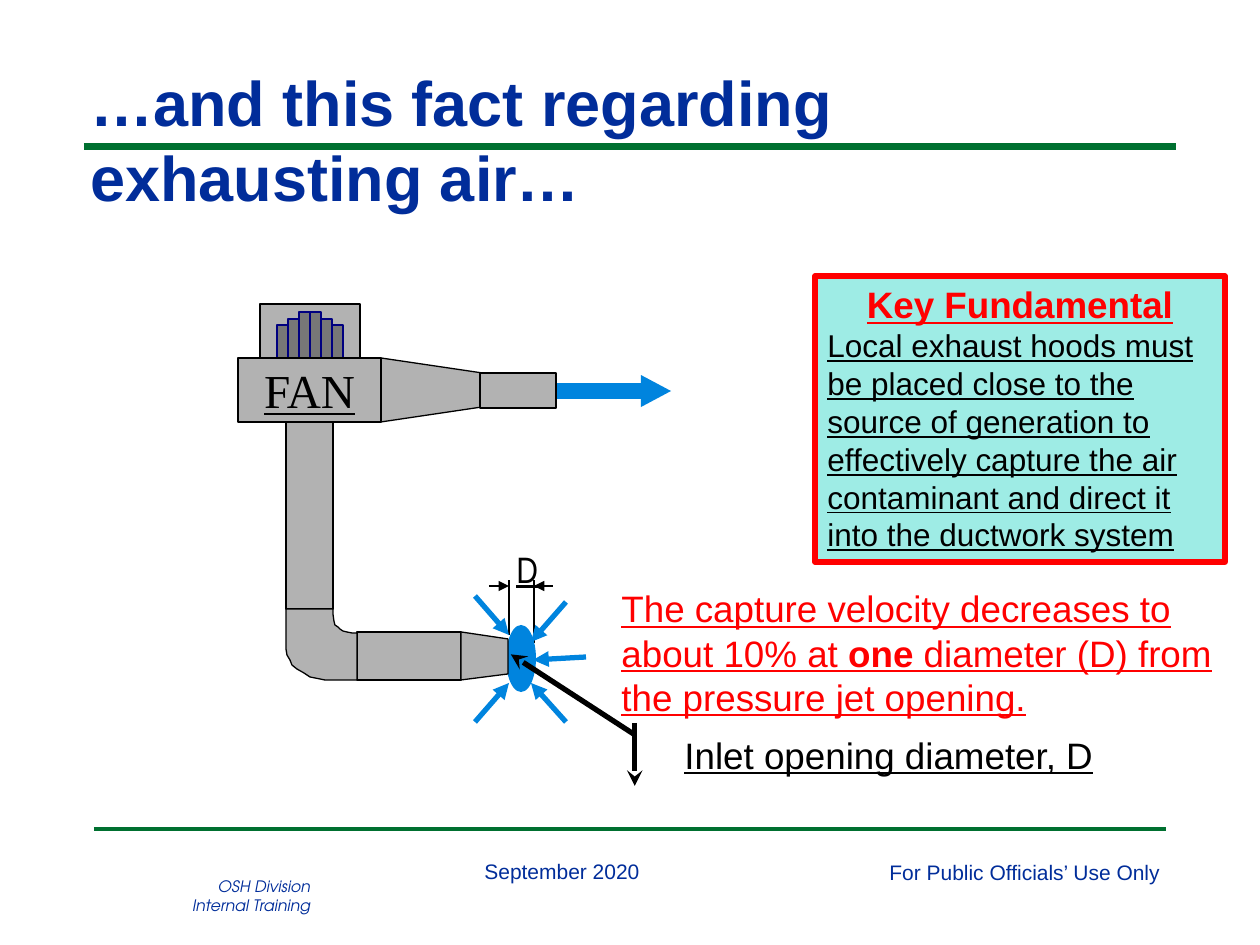
from lxml import etree
from pptx import Presentation
from pptx.dml.color import RGBColor
from pptx.enum.shapes import MSO_CONNECTOR, MSO_SHAPE
from pptx.enum.text import MSO_ANCHOR, PP_ALIGN
from pptx.oxml.ns import qn
from pptx.util import Pt

PX = 914400 / 126

BLACK = RGBColor(0x00, 0x00, 0x00)
NAVY = RGBColor(0x01, 0x2D, 0x9A)
GREEN = RGBColor(0x00, 0x70, 0x30)
AIR_BLUE = RGBColor(0x00, 0x84, 0xDE)
RED = RGBColor(0xFF, 0x00, 0x00)
DUCT_GRAY = RGBColor(0xB2, 0xB2, 0xB2)
MOTOR_GRAY = RGBColor(0x77, 0x77, 0x77)
MOTOR_EDGE = RGBColor(0x00, 0x00, 0x80)
AQUA = RGBColor(0x9E, 0xEC, 0xE5)

OUTLET_CONE = [(381, 422), (489, 406), (489, 374), (381, 358)]
INLET_CONE = [(461, 680), (508, 674), (508, 639), (461, 632)]
ELBOW = [
    (333, 609), (333, 614), (334, 621), (335, 625), (338, 627), (340, 629),
    (343, 631), (347, 632), (352, 633), (357, 633), (357, 680), (325, 680),
    (320, 679), (315, 678), (310, 677), (304, 673), (297, 669), (292, 665),
    (290, 660), (287, 655), (286, 649), (286, 609),
]


def px(*values):
    return [round(value * PX) for value in values]


def style_shape(shape, fill, line, width):
    shape.shadow.inherit = False
    if fill is None:
        shape.fill.background()
    else:
        shape.fill.solid()
        shape.fill.fore_color.rgb = fill
    if line is None:
        shape.line.fill.background()
    else:
        shape.line.color.rgb = line
        shape.line.width = Pt(width)


def add_box(slide, preset, box, fill=None, line=None, width=0.75):
    shape = slide.shapes.add_shape(preset, *px(*box))
    style_shape(shape, fill, line, width)
    return shape


def add_duct(slide, box):
    return add_box(slide, MSO_SHAPE.RECTANGLE, box, DUCT_GRAY, BLACK)


def add_outline(slide, points):
    builder = slide.shapes.build_freeform(*points[0], scale=PX)
    builder.add_line_segments(points[1:], close=True)
    style_shape(builder.convert_to_shape(), DUCT_GRAY, BLACK, 0.75)


def add_arrowhead(line, kind):
    etree.SubElement(line._get_or_add_ln(), qn("a:tailEnd"), type=kind)


def add_line(slide, start, end, color, width, arrow=False):
    connector = slide.shapes.add_connector(
        MSO_CONNECTOR.STRAIGHT, *px(*start, *end))
    connector.line.color.rgb = color
    connector.line.width = Pt(width)
    if arrow:
        add_arrowhead(connector.line, "triangle")
    etree.SubElement(connector._element.spPr, qn("a:effectLst"))


def style_paragraph(paragraph, size, color, font="Arial", align=PP_ALIGN.LEFT,
                    bold=False, italic=False, underline=False):
    paragraph.alignment = align
    paragraph.font.name = font
    paragraph.font.size = Pt(size)
    paragraph.font.color.rgb = color
    paragraph.font.bold = bold
    paragraph.font.italic = italic
    paragraph.font.underline = underline


def write_text(shape, text, size, color, wrap=True, anchor=MSO_ANCHOR.TOP,
               **style):
    frame = shape.text_frame
    frame.word_wrap = wrap
    frame.vertical_anchor = anchor
    frame.text = text
    for paragraph in frame.paragraphs:
        style_paragraph(paragraph, size, color, **style)
    return frame


def add_text(slide, box, text, size, color, **style):
    shape = slide.shapes.add_textbox(*px(*box))
    return write_text(shape, text, size, color, **style)


def add_title(slide):
    title = slide.shapes.title
    title.left, title.top, title.width, title.height = px(84, 63, 1092, 152)
    frame = write_text(title, "…and this fact regarding exhausting air…",
                       36, NAVY, bold=True)
    frame.margin_left = frame.margin_right = Pt(3.6)
    frame.margin_top = frame.margin_bottom = 0


def add_page_frame(slide):
    add_line(slide, (84, 147), (1176, 147), GREEN, 4)
    add_line(slide, (94, 829), (1166, 829), GREEN, 2)
    add_text(slide, (877, 853, 299, 38), "For Public Officials’ Use Only",
             12, NAVY, wrap=False)
    add_text(slide, (147, 871, 176, 62), "OSH Division\nInternal Training",
             9, NAVY, wrap=False, font="TeX Gyre Adventor",
             align=PP_ALIGN.RIGHT, italic=True)
    add_text(slide, (472, 852, 181, 38), "September 2020", 12, NAVY,
             wrap=False)


def add_diameter_mark(slide):
    add_line(slide, (509, 635), (509, 580), BLACK, 0.75)
    add_line(slide, (534, 643), (534, 580), BLACK, 0.75)
    add_line(slide, (553, 586), (534, 586), BLACK, 0.75, arrow=True)
    add_line(slide, (489, 586), (509, 586), BLACK, 0.75, arrow=True)
    add_text(slide, (504, 541, 55, 57), "D", 21, BLACK,
             font="Arial Narrow", underline=True)


def add_air_flow(slide):
    outlet = add_box(slide, MSO_SHAPE.RIGHT_ARROW, (553, 375, 118, 32),
                     AIR_BLUE)
    outlet.adjustments[1] = 0.938
    add_box(slide, MSO_SHAPE.OVAL, (506, 625, 30, 67), AIR_BLUE)
    for start, end in [
        ((566, 722), (531, 683)), ((566, 602), (531, 642)),
        ((475, 596), (509, 635)), ((475, 722), (509, 683)),
        ((586, 657), (533, 660)),
    ]:
        add_line(slide, start, end, AIR_BLUE, 3, arrow=True)


def add_fan_and_ducts(slide):
    add_outline(slide, OUTLET_CONE)
    add_duct(slide, (480, 373, 76, 35))
    add_duct(slide, (260, 304, 100, 54))
    for index, height in enumerate([33, 39, 46, 46, 39, 33]):
        add_box(slide, MSO_SHAPE.RECTANGLE,
                (277 + 11 * index, 358 - height, 11, height),
                MOTOR_GRAY, MOTOR_EDGE)
    add_duct(slide, (286, 422, 47, 187))
    add_duct(slide, (357, 632, 104, 48))
    add_outline(slide, INLET_CONE)
    add_outline(slide, ELBOW)
    fan = add_duct(slide, (238, 358, 143, 64))
    write_text(fan, "FAN", 27, BLACK, wrap=False, anchor=MSO_ANCHOR.MIDDLE,
               font="Times New Roman", align=PP_ALIGN.CENTER, underline=True)


def add_velocity_note(slide):
    frame = add_text(slide, (609, 580, 635, 146), "", 21, RED, underline=True)
    paragraph = frame.paragraphs[0]
    for text, bold in [
        ("The capture velocity decreases to about 10% at ", False),
        ("one", True),
        (" diameter (D) from the pressure jet opening.", False),
    ]:
        run = paragraph.add_run()
        run.text = text
        run.font.bold = bold


def add_inlet_callout(slide):
    callout = add_box(slide, MSO_SHAPE.LINE_CALLOUT_1_ACCENT_BAR,
                      (672, 723, 449, 63), line=BLACK, width=3)
    for index, value in enumerate([0.188, -0.083, -1.089, -0.359]):
        callout.adjustments[index] = value
    add_arrowhead(callout.line, "stealth")
    write_text(callout, "Inlet opening diameter, D", 21, BLACK,
               anchor=MSO_ANCHOR.MIDDLE, underline=True)


def add_key_box(slide):
    box = add_box(slide, MSO_SHAPE.RECTANGLE, (815, 276, 410, 286),
                  AQUA, RED, 3)
    frame = write_text(
        box,
        "Key Fundamental\n"
        "Local exhaust hoods must be placed close to the source of generation "
        "to effectively capture the air contaminant and direct it into the "
        "ductwork system",
        18, BLACK, underline=True)
    style_paragraph(frame.paragraphs[0], 21, RED, align=PP_ALIGN.CENTER,
                    bold=True, underline=True)


def main():
    presentation = Presentation()
    presentation.slide_width, presentation.slide_height = px(1260, 945)
    slide = presentation.slides.add_slide(presentation.slide_layouts[5])
    add_page_frame(slide)
    add_title(slide)
    add_velocity_note(slide)
    add_diameter_mark(slide)
    add_air_flow(slide)
    add_fan_and_ducts(slide)
    add_inlet_callout(slide)
    add_key_box(slide)
    presentation.save("out.pptx")


if __name__ == "__main__":
    main()
